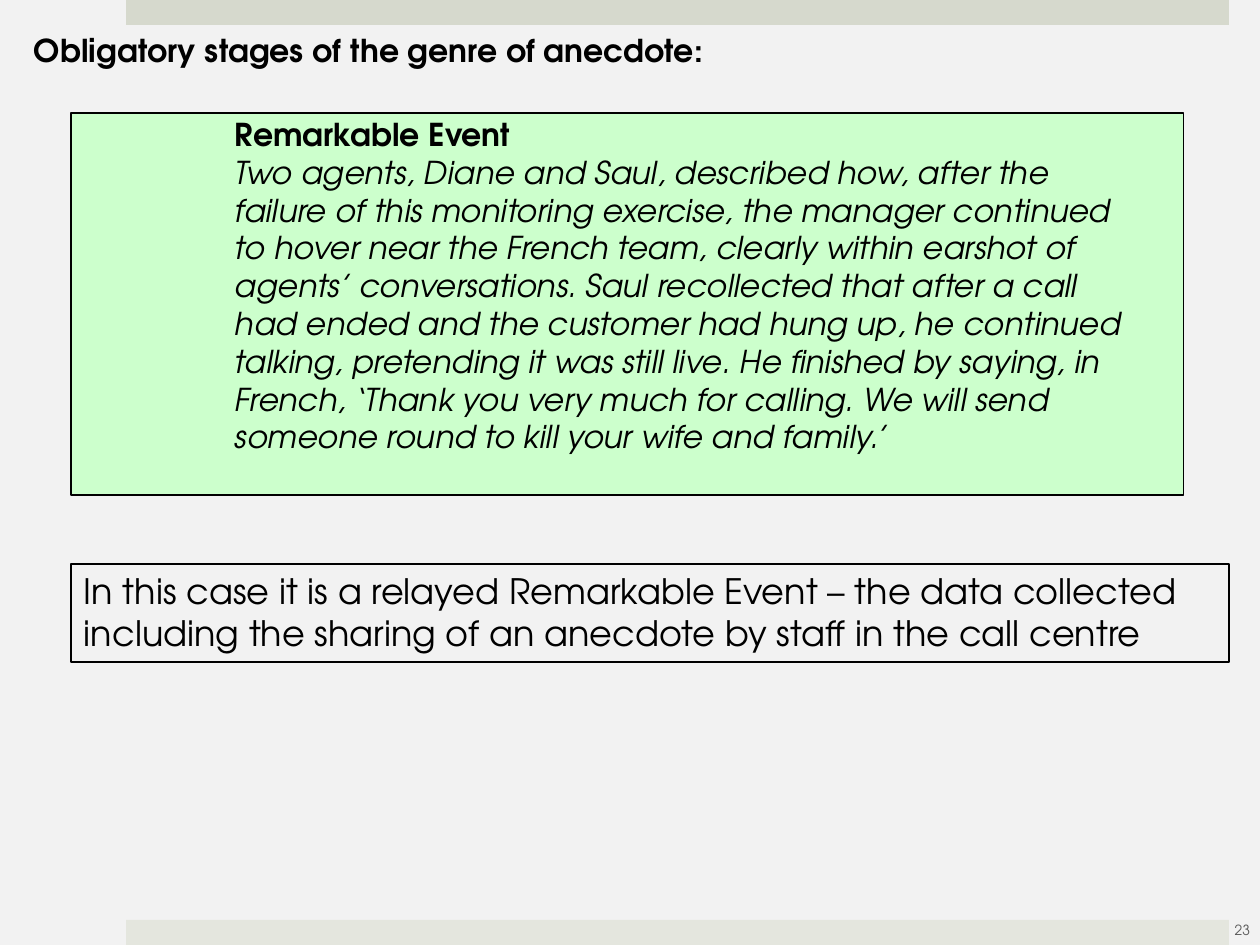
from pptx import Presentation
from pptx.dml.color import RGBColor
from pptx.enum.shapes import MSO_SHAPE
from pptx.enum.text import MSO_ANCHOR, PP_ALIGN
from pptx.util import Emu, Pt

RECTANGLE = MSO_SHAPE.RECTANGLE
TOP, MIDDLE = MSO_ANCHOR.TOP, MSO_ANCHOR.MIDDLE
LEFT, CENTER = PP_ALIGN.LEFT, PP_ALIGN.CENTER
PX = 914400 // 126

THEME = {
    "font": "TeX Gyre Adventor",
    "background": "F2F2F2",
    "top_band": "D6D9CD",
    "bottom_band": "E4E6DE",
    "event_fill": "CCFFCC",
    "ink": "000000",
    "muted": "595959",
    "heading_size": 18,
    "comment_size": 20,
    "number_size": 8,
}


def add_box(box, fill=None, outlined=False, insets=(13, 6, 13, 6), anchor=TOP):
    """Add a rectangle; box is left, top, width, height in px."""
    shape = slide.shapes.add_shape(RECTANGLE, *(Emu(v * PX) for v in box))
    shape.shadow.inherit = False
    if fill:
        shape.fill.solid()
        shape.fill.fore_color.rgb = RGBColor.from_string(THEME[fill])
    else:
        shape.fill.background()
    if outlined:
        shape.line.color.rgb = RGBColor.from_string(THEME["ink"])
        shape.line.width = Pt(0.75)
    else:
        shape.line.fill.background()
    frame = shape.text_frame
    frame.word_wrap = True
    frame.vertical_anchor = anchor
    frame.margin_left, frame.margin_top, frame.margin_right, frame.margin_bottom = (
        Emu(v * PX) for v in insets)
    paragraph = frame.paragraphs[0]
    paragraph.alignment = LEFT
    return paragraph


def add_run(paragraph, text, size, color="ink", bold=False, italic=False):
    run = paragraph.add_run()
    run.text = text
    font = run.font
    font.name = THEME["font"]
    font.size = Pt(THEME[size])
    font.bold = bold
    font.italic = italic
    font.color.rgb = RGBColor.from_string(THEME[color])


presentation = Presentation()
presentation.slide_width = Emu(1260 * PX)
presentation.slide_height = Emu(945 * PX)
slide = presentation.slides.add_slide(presentation.slide_layouts[6])
slide.background.fill.solid()
slide.background.fill.fore_color.rgb = RGBColor.from_string(THEME["background"])

# Bands along the top and bottom edges
for top, fill in ((0, "top_band"), (920, "bottom_band")):
    add_box((126, top, 1103, 25), fill)

# Quoted stage of the anecdote
event = add_box((71, 113, 1113, 382), "event_fill", True, insets=(164, 2, 38, 6))
add_run(event, "Remarkable Event", "heading_size", bold=True)
event.add_line_break()
add_run(
    event,
    "Two agents, Diane and Saul, described how, after the failure of this "
    "monitoring exercise, the manager continued to hover near the French team, "
    "clearly within earshot of agents’ conversations. Saul recollected that "
    "after a call had ended and the customer had hung up, he continued talking, "
    "pretending it was still live. He finished by saying, in French, ‘Thank you "
    "very much for calling. We will send someone round to kill your wife and "
    "family.’",
    "heading_size", italic=True)

# Slide number
number = add_box((1211, 905, 63, 50), anchor=MIDDLE)
number.alignment = CENTER
add_run(number, "23", "number_size", "muted")

# Comment on the stage
comment = add_box((71, 564, 1158, 98), outlined=True)
add_run(
    comment,
    "In this case it is a relayed Remarkable Event – the data collected "
    "including the sharing of an anecdote by staff in the call centre",
    "comment_size")

# Heading
heading = add_box((21, 25, 1113, 50))
add_run(heading, "Obligatory stages of the genre of anecdote:", "heading_size", bold=True)

presentation.save("out.pptx")
